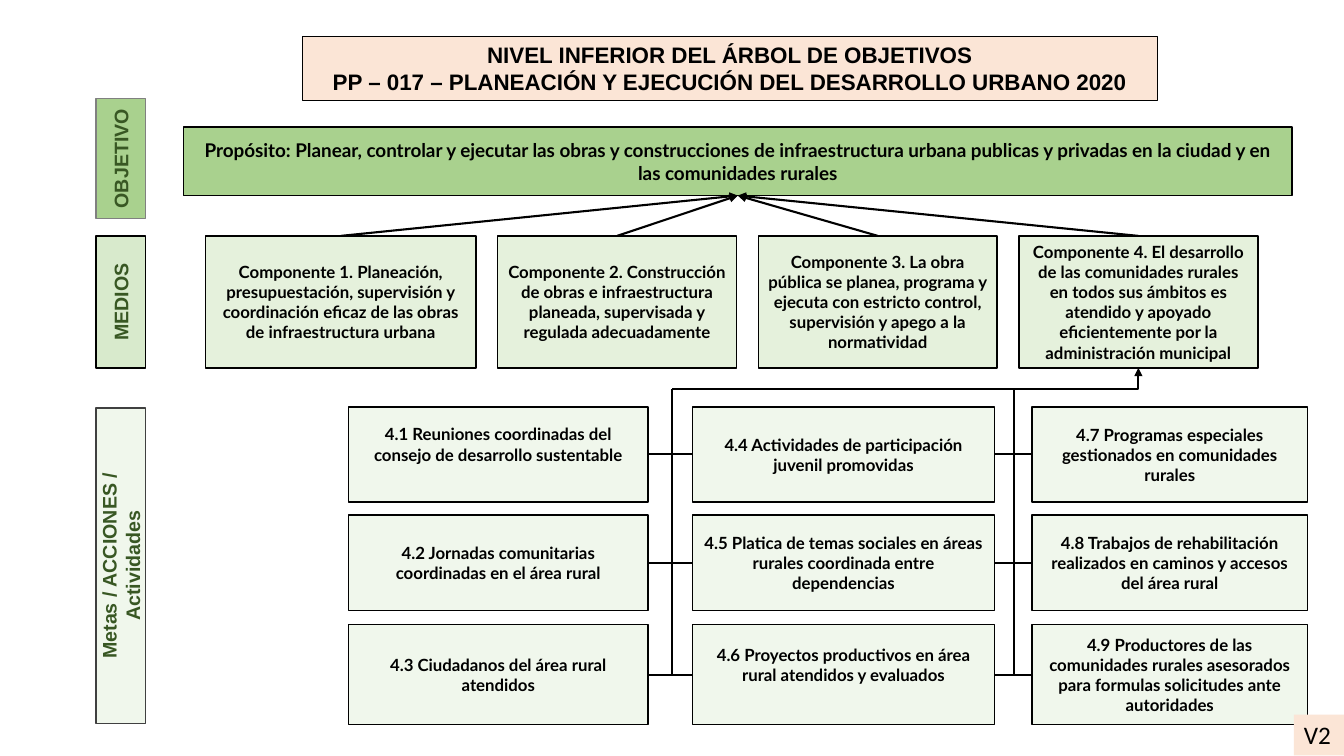
from lxml import etree
from pptx import Presentation
from pptx.dml.color import RGBColor
from pptx.enum.shapes import MSO_CONNECTOR, MSO_SHAPE
from pptx.enum.text import MSO_ANCHOR, PP_ALIGN
from pptx.oxml.ns import qn
from pptx.util import Pt

PROCESS, RECT = MSO_SHAPE.FLOWCHART_PROCESS, MSO_SHAPE.RECTANGLE
STRAIGHT, ELBOW = MSO_CONNECTOR.STRAIGHT, MSO_CONNECTOR.ELBOW
TOP, MIDDLE = MSO_ANCHOR.TOP, MSO_ANCHOR.MIDDLE
LEFT, CENTER = PP_ALIGN.LEFT, PP_ALIGN.CENTER
SITE_TOP, SITE_LEFT, SITE_BOTTOM, SITE_RIGHT = range(4)

BLACK = RGBColor(0x00, 0x00, 0x00)
GRAY = RGBColor(0x80, 0x80, 0x80)
DARK_GRAY = RGBColor(0x40, 0x40, 0x40)
DARK_GREEN = RGBColor(0x38, 0x57, 0x23)
GREEN = RGBColor(0xA9, 0xD1, 0x8E)
LIGHT_GREEN = RGBColor(0xC5, 0xE0, 0xB4)
PEACH = RGBColor(0xFB, 0xE5, 0xD6)

# Content
TITLE = [
    "NIVEL INFERIOR DEL ÁRBOL DE OBJETIVOS",
    "PP – 017 – PLANEACIÓN Y EJECUCIÓN DEL DESARROLLO URBANO 2020",
]
PURPOSE = ("Propósito: Planear, controlar y ejecutar las obras y construcciones de "
           "infraestructura urbana publicas y privadas en la ciudad y en las "
           "comunidades rurales")
VERSION = "V2"
# Level name, top, height, fill, opacity in percent, outline
LEVELS = [
    ("OBJETIVO", 70.4, 85.7, GREEN, 100, GRAY),
    ("MEDIOS", 168.5, 94.3, GREEN, 45, BLACK),
    ("Metas / ACCIONES / Actividades", 291.4, 225.4, LIGHT_GREEN, 25, DARK_GRAY),
]
# Component text, width
COMPONENTS = [
    ("Componente 1. Planeación, presupuestación, supervisión y coordinación eficaz "
     "de las obras de infraestructura urbana", 193),
    ("Componente 2. Construcción de obras e infraestructura planeada, supervisada y "
     "regulada adecuadamente", 170.6),
    ("Componente 3. La obra pública se planea, programa y ejecuta con estricto "
     "control, supervisión y apego a la normatividad", 170.6),
    ("Componente 4. El desarrollo de las comunidades rurales en todos sus ámbitos es "
     "atendido y apoyado eficientemente por la administración municipal", 170.6),
]
# One list per column, from top to bottom
ACTIVITIES = [
    ["4.1 Reuniones coordinadas del consejo de desarrollo sustentable",
     "4.2 Jornadas comunitarias coordinadas en el área rural",
     "4.3 Ciudadanos del área rural atendidos"],
    ["4.4 Actividades de participación juvenil promovidas",
     "4.5 Platica de temas sociales en áreas rurales coordinada entre dependencias",
     "4.6 Proyectos productivos en área rural atendidos y evaluados"],
    ["4.7 Programas especiales gestionados en comunidades rurales",
     "4.8 Trabajos de rehabilitación realizados en caminos y accesos del área rural",
     "4.9 Productores de las comunidades rurales asesorados para formulas "
     "solicitudes ante autoridades"],
]
RAISED = ("4.1", "4.6")  # activities whose text sits above the middle

# Layout
LEVEL_CENTER, LEVEL_THICKNESS = 86.2, 35.3
COMPONENT_LEFT, COMPONENT_TOP, COMPONENT_HEIGHT, COMPONENT_GAP = 146.9, 168.5, 94.3, 15.6
COLUMNS = [(249.1, 213.8), (494.6, 216), (737.3, 196.6)]  # left, width
ROWS = [(290.6, 68), (367.9, 68), (446.2, 71.3)]  # top, height
TRUNKS = (480.2, 724.3)
TRUNK_TOP, TRUNK_BOTTOM = 277.9, 483.1

prs = Presentation()
prs.slide_width, prs.slide_height = Pt(960), Pt(540)
slide = prs.slides.add_slide(prs.slide_layouts[6])


def add_box(text, left, top, width, height, *, fill, opacity=100, outline=BLACK,
            outline_width=1, kind=PROCESS, size=12, font="Lato", color=BLACK, bold=True,
            align=CENTER, anchor=MIDDLE, bottom_inset=3.6, wrap=True, rotation=0):
    """Draw a filled box; text is one string or a list of paragraphs."""
    box = slide.shapes.add_shape(kind, Pt(left), Pt(top), Pt(width), Pt(height))
    box.shadow.inherit = False
    box.rotation = rotation
    box.fill.solid()
    box.fill.fore_color.rgb = fill
    if opacity < 100:
        tint = box._element.spPr.find(qn("a:solidFill")).find(qn("a:srgbClr"))
        etree.SubElement(tint, qn("a:alpha"), val=str(opacity * 1000))
    if outline is None:
        box.line.fill.background()
    else:
        box.line.color.rgb = outline
        box.line.width = Pt(outline_width)
    frame = box.text_frame
    frame.word_wrap = wrap
    frame.vertical_anchor = anchor
    frame.margin_bottom = Pt(bottom_inset)
    lines = [text] if isinstance(text, str) else text
    for number, line in enumerate(lines):
        paragraph = frame.add_paragraph() if number else frame.paragraphs[0]
        paragraph.alignment = align
        run = paragraph.add_run()
        run.text = line
        run.font.name, run.font.size, run.font.bold = font, Pt(size), bold
        run.font.color.rgb = color
    return box


def add_link(x1=0, y1=0, x2=0, y2=0, *, start=None, end=None, kind=STRAIGHT, arrow=False):
    """Draw a line; start and end are (box, connection site) pairs."""
    link = slide.shapes.add_connector(kind, Pt(x1), Pt(y1), Pt(x2), Pt(y2))
    if start:
        link.begin_connect(*start)
    if end:
        link.end_connect(*end)
    link.line.color.rgb = BLACK
    link.line.width = Pt(1.5)
    properties = link._element.spPr
    if arrow:
        etree.SubElement(properties.find(qn("a:ln")), qn("a:tailEnd"), type="triangle")
    etree.SubElement(properties, qn("a:effectLst"))
    return link


# Level labels, turned to read upwards
for name, top, height, fill, opacity, outline in LEVELS:
    add_box(name, LEVEL_CENTER - height / 2, top + (height - LEVEL_THICKNESS) / 2,
            height, LEVEL_THICKNESS, fill=fill, opacity=opacity, outline=outline,
            size=14, font="Arial", color=DARK_GREEN, rotation=270)

# Title and purpose
add_box(TITLE, 216, 25.9, 610.6, 46, fill=PEACH, outline_width=0.75, kind=RECT,
        size=16, font="Arial", anchor=TOP)
purpose = add_box(PURPOSE, 131, 90.7, 792, 49, fill=GREEN, size=13.5)

# Components, each pointing to the purpose
left = COMPONENT_LEFT
for text, width in COMPONENTS:
    component = add_box(text, left, COMPONENT_TOP, width, COMPONENT_HEIGHT,
                        fill=GREEN, opacity=30)
    add_link(start=(component, SITE_TOP), end=(purpose, SITE_BOTTOM), arrow=True)
    left += width + COMPONENT_GAP

# Activities grid
grid = [
    [add_box(text, x, y, width, height, fill=LIGHT_GREEN, opacity=25,
             bottom_inset=18 if text.startswith(RAISED) else 3.6)
     for text, (y, height) in zip(column, ROWS)]
    for column, (x, width) in zip(ACTIVITIES, COLUMNS)
]
for before, after in zip(grid, grid[1:]):
    for left_box, right_box in zip(before, after):
        add_link(start=(right_box, SITE_LEFT), end=(left_box, SITE_RIGHT))

# Trunks that lead the activities up to the last component
for x in TRUNKS:
    add_link(x, TRUNK_TOP, x, TRUNK_BOTTOM)
add_link(TRUNKS[0], TRUNK_TOP, TRUNKS[1], TRUNK_TOP)
riser = add_link(TRUNKS[1], TRUNK_TOP, 813.2, 262.8, end=(component, SITE_BOTTOM),
                 kind=ELBOW, arrow=True)
riser._element.spPr.find(qn("a:prstGeom")).set("prst", "bentConnector2")

# Version tag
add_box(VERSION, 924.2, 510.5, 35.8, 29.1, fill=PEACH, outline=None, kind=RECT, size=18,
        font="Calibri", bold=False, align=LEFT, anchor=TOP, wrap=False)

prs.save("out.pptx")
